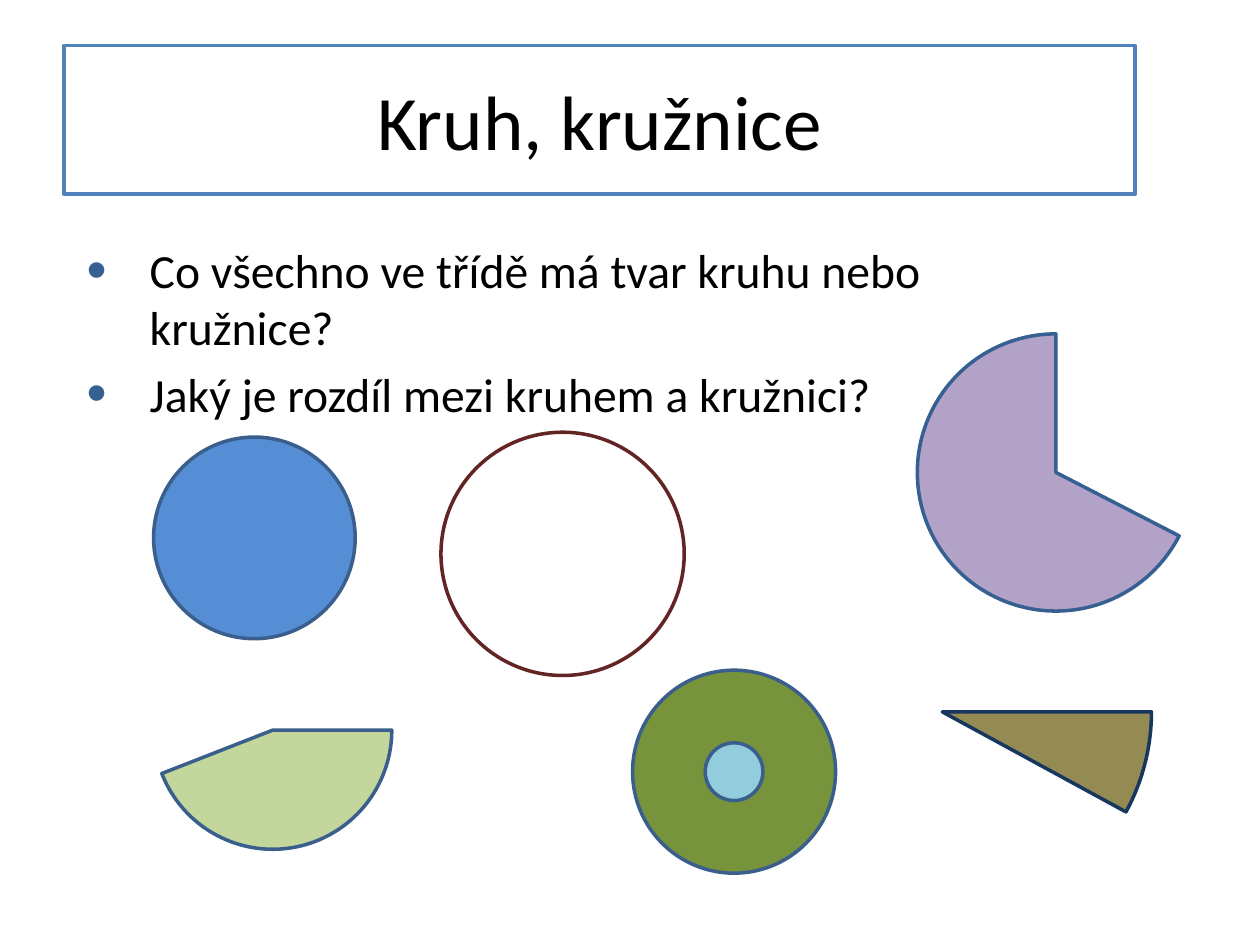
from dataclasses import dataclass
from typing import Optional

from lxml import etree
from pptx import Presentation
from pptx.dml.color import RGBColor
from pptx.enum.shapes import MSO_SHAPE
from pptx.enum.text import MSO_ANCHOR, PP_ALIGN
from pptx.oxml.ns import qn
from pptx.util import Pt

RECTANGLE = MSO_SHAPE.RECTANGLE
ELLIPSE = MSO_SHAPE.OVAL
PIE = MSO_SHAPE.PIE
CENTER, LEFT = PP_ALIGN.CENTER, PP_ALIGN.LEFT
MIDDLE, TOP = MSO_ANCHOR.MIDDLE, MSO_ANCHOR.TOP

FONT = "Calibri"
OUTLINE_WIDTH = 2
PIE_UNITS_PER_DEGREE = 0.6
BULLET_INDENT = 36

COLORS = {
    "white": "FFFFFF",
    "black": "000000",
    "title_line": "4F81BD",
    "accent": "376092",
    "outline": "3A5F8C",
    "blue": "558ED5",
    "maroon": "632523",
    "purple": "B3A2C7",
    "light_green": "C3D69B",
    "green": "77933C",
    "aqua": "93CDDD",
    "olive": "948A54",
    "navy": "17375E",
}


@dataclass(frozen=True)
class Round:
    """A circle, or a sector when its start and end degrees are given."""
    left: float
    top: float
    diameter: float
    fill: str
    line: str = "outline"
    sector: Optional[tuple[float, float]] = None


CIRCLES_AND_SECTORS = [
    Round(87.8, 249.8, 115.2, "blue"),
    Round(252, 247, 139, "white", "maroon"),
    Round(524.2, 190.8, 158.4, "purple", "accent", (27.23, 270)),
    Round(87.8, 349.2, 136.1, "light_green", sector=(0, 158.65)),
]
RING = [
    Round(361.5, 383, 116, "green"),
    Round(403, 424.5, 33, "aqua"),
]
NARROW_SECTOR = Round(419, 287.3, 239, "olive", "navy", (0, 28.58))

QUESTIONS = [
    "Co všechno ve třídě má tvar kruhu nebo kružnice?",
    "Jaký je rozdíl mezi kruhem a kružnici?",
]


def rgb(name: str) -> RGBColor:
    return RGBColor.from_string(COLORS[name])


def paint(shape, fill: str, line: str) -> None:
    shape.shadow.inherit = False
    shape.fill.solid()
    shape.fill.fore_color.rgb = rgb(fill)
    shape.line.color.rgb = rgb(line)
    shape.line.width = Pt(OUTLINE_WIDTH)


def draw_round(shapes, item: Round) -> None:
    kind = PIE if item.sector else ELLIPSE
    figure = shapes.add_shape(kind, Pt(item.left), Pt(item.top),
                              Pt(item.diameter), Pt(item.diameter))
    for index, degrees in enumerate(item.sector or ()):
        figure.adjustments[index] = degrees * PIE_UNITS_PER_DEGREE
    paint(figure, item.fill, item.line)


def add_bullet(paragraph, color: str) -> None:
    properties = paragraph._p.get_or_add_pPr()
    properties.set("marL", str(Pt(BULLET_INDENT)))
    properties.set("indent", str(-Pt(BULLET_INDENT)))
    bullet_color = etree.SubElement(properties, qn("a:buClr"))
    etree.SubElement(bullet_color, qn("a:srgbClr"), val=COLORS[color])
    etree.SubElement(properties, qn("a:buSzPct"), val="120000")
    etree.SubElement(properties, qn("a:buFont"), typeface="Arial")
    etree.SubElement(properties, qn("a:buChar"), char="•")


def write_text(shape, *lines: str, size: float, color: str = "black",
               align=LEFT, anchor=TOP, space_before: float = 0,
               bullet: Optional[str] = None) -> None:
    frame = shape.text_frame
    frame.word_wrap = True
    frame.vertical_anchor = anchor
    for index, line in enumerate(lines):
        paragraph = frame.add_paragraph() if index else frame.paragraphs[0]
        paragraph.alignment = align
        paragraph.space_before = Pt(space_before)
        if bullet:
            add_bullet(paragraph, bullet)
        run = paragraph.add_run()
        run.text = line
        run.font.name = FONT
        run.font.size = Pt(size)
        run.font.color.rgb = rgb(color)


def main() -> None:
    presentation = Presentation()
    presentation.slide_width, presentation.slide_height = Pt(720), Pt(540)
    slide = presentation.slides.add_slide(presentation.slide_layouts[6])
    shapes = slide.shapes

    # Title
    title = shapes.add_shape(RECTANGLE, Pt(36.7), Pt(26), Pt(612), Pt(85))
    paint(title, "white", "title_line")
    write_text(title, "Kruh, kružnice", size=44, align=CENTER, anchor=MIDDLE)

    # Questions for the class
    questions = shapes.add_textbox(Pt(42.5), Pt(134), Pt(504), Pt(138))
    write_text(questions, *QUESTIONS, size=27.2, space_before=5.4,
               bullet="accent")

    # Circles and sectors
    for item in CIRCLES_AND_SECTORS:
        draw_round(shapes, item)

    # Ring made of two grouped circles
    ring = shapes.add_group_shape()
    for item in RING:
        draw_round(ring.shapes, item)

    draw_round(shapes, NARROW_SECTOR)

    presentation.save("out.pptx")


if __name__ == "__main__":
    main()
